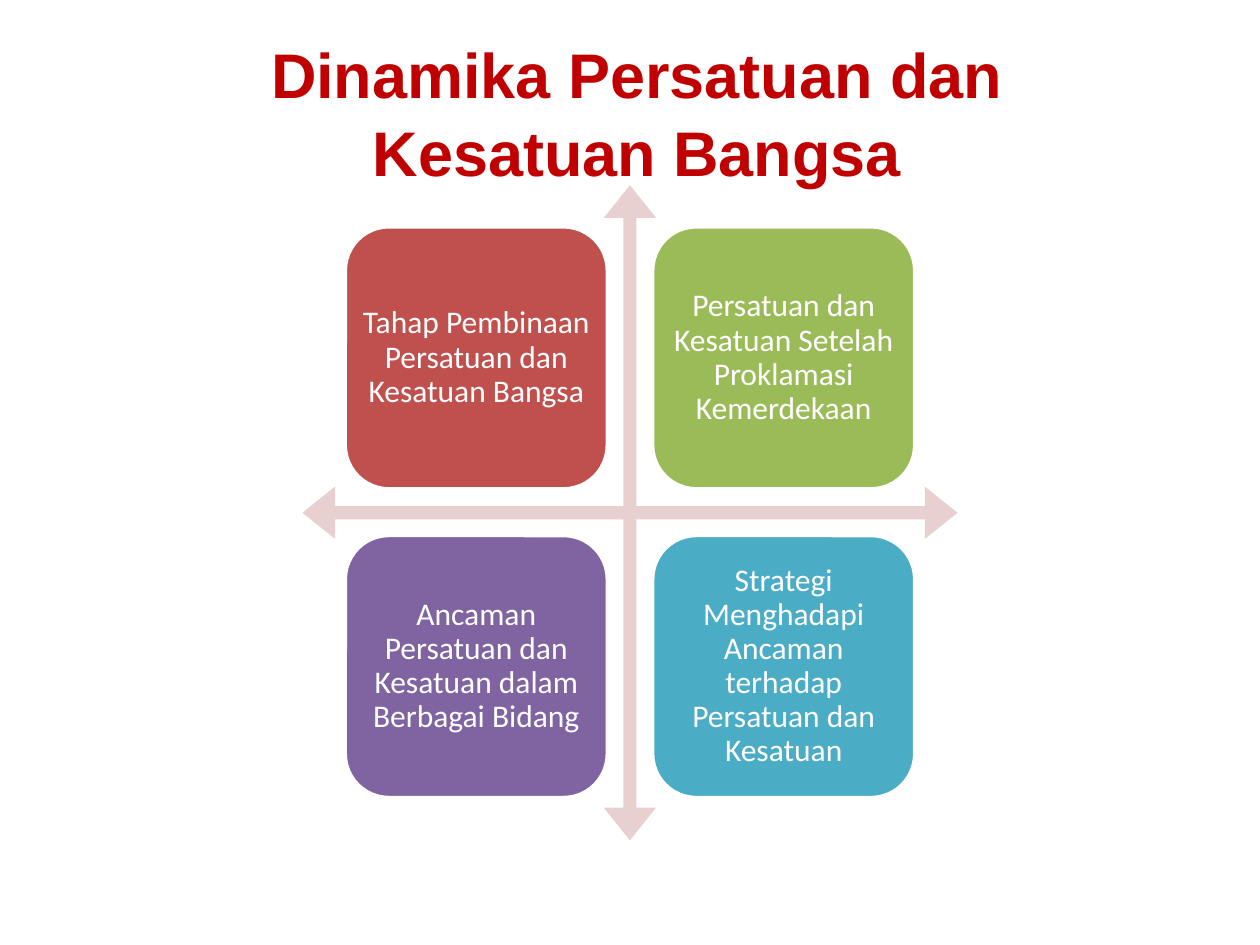
from dataclasses import dataclass

from pptx import Presentation
from pptx.dml.color import RGBColor
from pptx.enum import shapes, text
from pptx.util import Inches, Pt

BOX = 2.08
LEFT, TOP = 2.74, 1.8
STEP_X, STEP_Y = 2.44, 2.45


@dataclass
class Quadrant:
    col: int
    row: int
    color: str
    label: str


QUADRANTS = [
    Quadrant(0, 0, "C0504D", "Tahap Pembinaan Persatuan dan Kesatuan Bangsa"),
    Quadrant(1, 0, "9BBB59", "Persatuan dan Kesatuan Setelah Proklamasi Kemerdekaan"),
    Quadrant(0, 1, "8064A2", "Ancaman Persatuan dan Kesatuan dalam Berbagai Bidang"),
    Quadrant(1, 1, "4BACC6", "Strategi Menghadapi Ancaman terhadap Persatuan dan Kesatuan"),
]


def rgb(value: str) -> RGBColor:
    return RGBColor.from_string(value)


def write(tf, label: str, font: str, size: float, color: str, spacing: float, bold: bool = False) -> None:
    tf.word_wrap = True
    tf.auto_size = text.MSO_AUTO_SIZE.NONE
    tf.vertical_anchor = text.MSO_ANCHOR.MIDDLE
    p = tf.paragraphs[0]
    p.alignment = text.PP_ALIGN.CENTER
    p.line_spacing = spacing
    r = p.add_run()
    r.text = label
    r.font.name = font
    r.font.size = Pt(size)
    r.font.bold = bold
    r.font.color.rgb = rgb(color)


def add_title(s, label: str) -> None:
    sp = s.shapes.title
    sp.left, sp.top, sp.width, sp.height = map(Inches, (0.98, 0.21, 8.15, 1.25))
    tf = sp.text_frame
    tf.margin_top, tf.margin_bottom = Inches(0.1), 0
    write(tf, label, "Arial", 36, "C00000", 1.03, bold=True)


def add_axes(s) -> None:
    sp = s.shapes.add_shape(shapes.MSO_SHAPE.QUAD_ARROW,
                            Inches(2.4), Inches(1.47), Inches(5.2), Inches(5.2))
    for i, value in enumerate((0.02, 0.04, 0.05)):
        sp.adjustments[i] = value
    sp.shadow.inherit = False
    sp.fill.solid()
    sp.fill.fore_color.rgb = rgb("E8D0D0")
    sp.line.fill.background()


def add_quadrant(s, q: Quadrant) -> None:
    sp = s.shapes.add_shape(shapes.MSO_SHAPE.ROUNDED_RECTANGLE,
                            Inches(LEFT + q.col * STEP_X), Inches(TOP + q.row * STEP_Y),
                            Inches(BOX), Inches(BOX))
    sp.shadow.inherit = False
    sp.fill.solid()
    sp.fill.fore_color.rgb = rgb(q.color)
    sp.line.color.rgb = rgb("FFFFFF")
    sp.line.width = Pt(2)
    tf = sp.text_frame
    tf.margin_left = tf.margin_right = tf.margin_top = tf.margin_bottom = Inches(0.03)
    write(tf, q.label, "Calibri", 18, "FFFFFF", 0.9)


def main() -> None:
    prs = Presentation()
    prs.slide_width, prs.slide_height = Inches(10), Inches(7.5)
    s = prs.slides.add_slide(prs.slide_layouts[5])
    add_title(s, "Dinamika Persatuan dan Kesatuan Bangsa")
    add_axes(s)
    for q in QUADRANTS:
        add_quadrant(s, q)
    prs.save("out.pptx")


if __name__ == "__main__":
    main()
